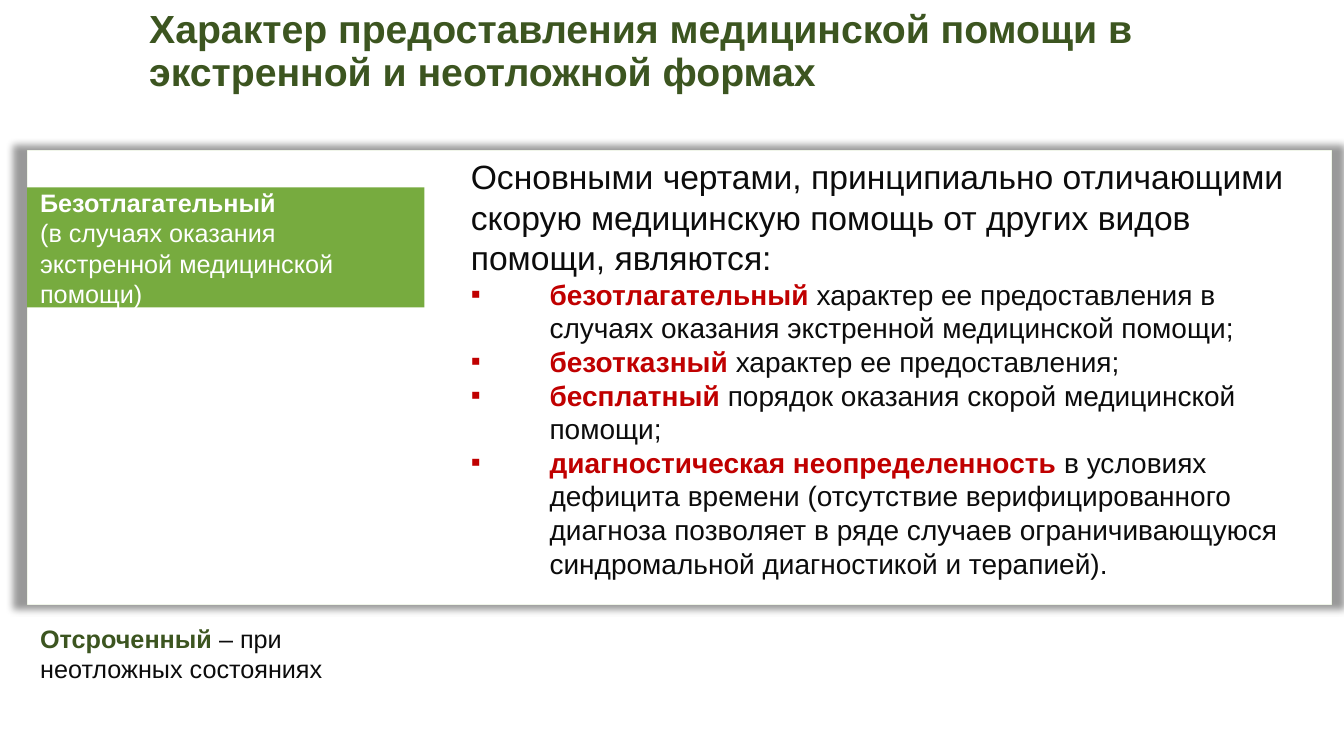
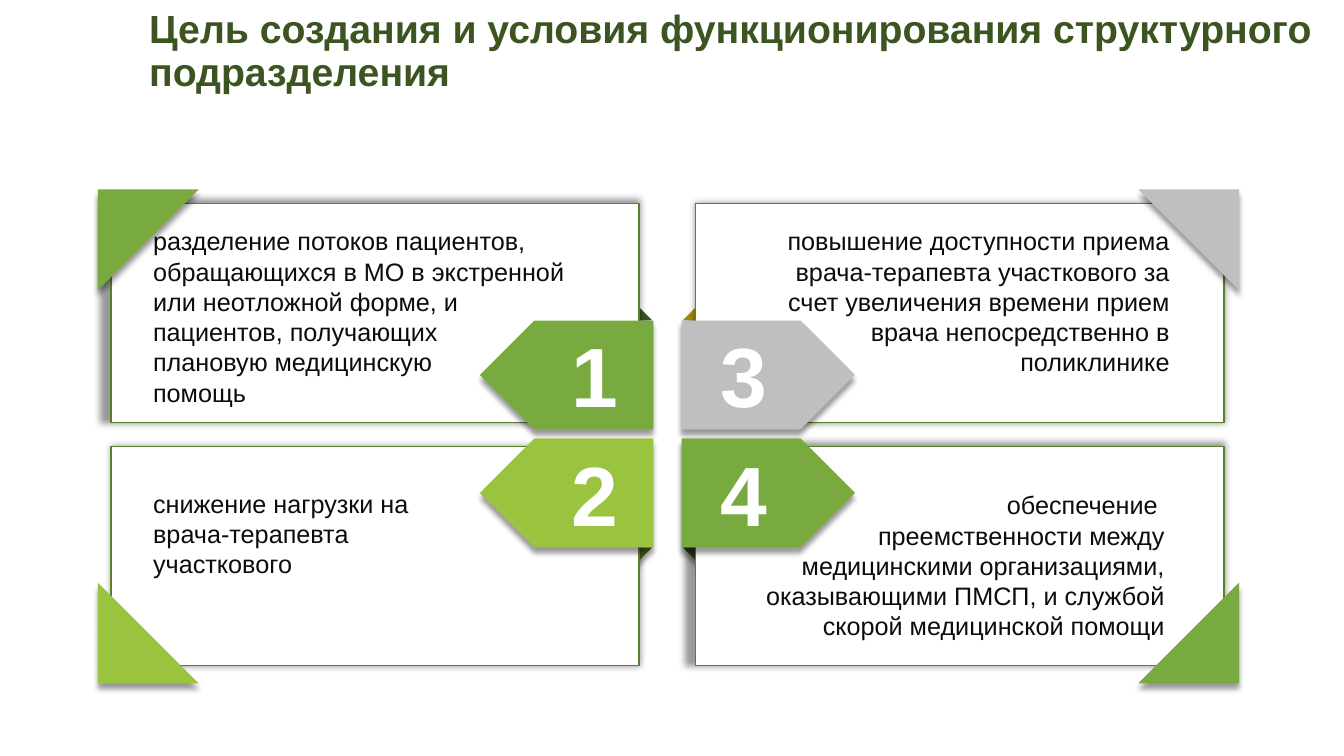
from lxml import etree
from pptx import Presentation
from pptx.dml.color import RGBColor
from pptx.enum.shapes import MSO_SHAPE
from pptx.enum.text import MSO_ANCHOR, MSO_AUTO_SIZE, PP_ALIGN
from pptx.oxml.ns import qn
from pptx.util import Inches, Pt

RECTANGLE = MSO_SHAPE.RECTANGLE
PENTAGON = MSO_SHAPE.PENTAGON
RIGHT_TRIANGLE = MSO_SHAPE.RIGHT_TRIANGLE
TOP = MSO_ANCHOR.TOP
FIXED = MSO_AUTO_SIZE.NONE
LEFT, CENTER, RIGHT = PP_ALIGN.LEFT, PP_ALIGN.CENTER, PP_ALIGN.RIGHT

FONT = "Arial"
COLORS = {
    "white": "FFFFFF",
    "black": "000000",
    "text": "0C0C0C",
    "accent": "C00000",
    "dark": "3C5520",
    "outline": "5A7F2F",
    "green": "78AA3F",
    "band": "77AB3F",
    "lime": "9AC340",
    "gray": "BFBFBF",
    "olive": "4D631F",
    "gold": "9E8803",
}

BODY = {"size": Pt(18), "color": "text"}
NUMBER = {"size": Pt(60), "color": "white", "bold": True}
TITLE = {"size": Pt(28), "color": "dark", "bold": True}
INTRO = {"size": Pt(24), "color": "text"}
ITEM = {"size": Pt(20), "color": "text"}
KEY_ITEM = {"size": Pt(20), "color": "accent", "bold": True}
SOFT_SHADOW = {"blurRad": Pt(4), "dist": Pt(4), "dir": 5400000}
CARD_SHADOW = {"blurRad": Pt(5), "dist": 0, "dir": 0}
WIDE_SHADOW = {**CARD_SHADOW, "sx": 102000, "sy": 102000}


def rgb(name):
    return RGBColor.from_string(COLORS[name])


def place(shape, bounds):
    for name, value in zip(("left", "top", "width", "height"), bounds):
        setattr(shape, name, Inches(value))


def add_color_alpha(color, percent):
    etree.SubElement(color, qn("a:alpha"), val=str(percent * 1000))


def add_shadow(shape, settings):
    shape.shadow.inherit = False
    effects = shape.element.spPr.find(qn("a:effectLst"))
    values = {name: str(value) for name, value in settings.items()}
    outer = etree.SubElement(effects, qn("a:outerShdw"), rotWithShape="0", **values)
    color = etree.SubElement(outer, qn("a:srgbClr"), val=COLORS["black"])
    add_color_alpha(color, 40)


def paint(shape, fill, shadow=None, line=None, line_width=1):
    shape.shadow.inherit = False
    shape.fill.solid()
    shape.fill.fore_color.rgb = rgb(fill)
    if line:
        shape.line.color.rgb = rgb(line)
        shape.line.width = Pt(line_width)
    else:
        shape.line.fill.background()
    if shadow:
        add_shadow(shape, shadow)
    return shape


def add_block(slide, kind, bounds, fill, rotation=0, **look):
    block = slide.shapes.add_shape(kind, *map(Inches, bounds))
    block.rotation = rotation
    return paint(block, fill, **look)


def add_fold(slide, points, fill):
    builder = slide.shapes.build_freeform(*map(Inches, points[0]), scale=1.0)
    builder.add_line_segments([tuple(map(Inches, point)) for point in points[1:]], close=True)
    return paint(builder.convert_to_shape(), fill, SOFT_SHADOW)


def write(frame, paragraphs, align=LEFT, spacing=1.0):
    settings = {"word_wrap": True, "auto_size": FIXED, "vertical_anchor": TOP}
    for name, value in settings.items():
        setattr(frame, name, value)
    for index, spans in enumerate(paragraphs):
        para = frame.paragraphs[0] if index == 0 else frame.add_paragraph()
        layout = {"alignment": align, "line_spacing": spacing, "space_before": Pt(0)}
        for name, value in layout.items():
            setattr(para, name, value)
        for text, style in spans:
            span = para.add_run()
            span.text = text
            span.font.name = FONT
            span.font.size = style["size"]
            span.font.bold = style.get("bold", False)
            span.font.color.rgb = rgb(style["color"])


def add_text(slide, bounds, paragraphs, align=LEFT):
    box = slide.shapes.add_textbox(*map(Inches, bounds))
    write(box.text_frame, paragraphs, align)


def set_bullet(para, symbol=None, indent=0):
    properties = para._p.get_or_add_pPr()
    properties.set("marL", str(Inches(indent)))
    properties.set("indent", str(-Inches(indent)))
    if symbol:
        etree.SubElement(properties, qn("a:buFont"), typeface=FONT)
        etree.SubElement(properties, qn("a:buChar"), char=symbol)
    else:
        etree.SubElement(properties, qn("a:buNone"))


def start_slide(deck, layout_index, title):
    slide = deck.slides.add_slide(deck.slide_layouts[layout_index])
    place(slide.shapes.title, (1.38, 0.05, 11.96, 1.09))
    write(slide.shapes.title.text_frame, [[(title, TITLE)]], spacing=0.9)
    return slide


def add_list(slide, bounds, intro, items):
    body = slide.placeholders[1]
    body.element.getparent().append(body.element)
    place(body, bounds)
    rows = [[(key, KEY_ITEM), (rest, ITEM)] for key, rest in items]
    write(body.text_frame, [[(intro, INTRO)]] + rows)
    first, *others = body.text_frame.paragraphs
    set_bullet(first)
    for para in others:
        set_bullet(para, "▪", 0.78)


def build_care_slide(deck):
    slide = start_slide(deck, 1, "Характер предоставления медицинской помощи в экстренной и неотложной формах")
    panel = add_block(slide, RECTANGLE, (0.27, 1.49, 12.94, 4.51), "white",
                      shadow={**WIDE_SHADOW, "algn": "ctr"}, line="green", line_width=0.25)
    add_color_alpha(panel.line._ln.find(".//" + qn("a:srgbClr")), 31)
    add_block(slide, RECTANGLE, (0.27, 1.86, 3.94, 1.19), "band")
    white = {**BODY, "color": "white"}
    add_text(slide, (0.3, 1.81, 3.7, 1.32), [
        [("Безотлагательный", {**white, "bold": True})],
        [("(в случаях оказания экстренной медицинской помощи)", white)],
    ])
    add_list(
        slide, (4.57, 1.5, 8.49, 4.34),
        "Основными чертами, принципиально отличающими скорую медицинскую помощь от других видов помощи, являются:",
        [
            ("безотлагательный", " характер ее предоставления в случаях оказания экстренной медицинской помощи;"),
            ("безотказный", " характер ее предоставления;"),
            ("бесплатный", " порядок оказания скорой медицинской помощи;"),
            ("диагностическая неопределенность ",
             "в условиях дефицита времени (отсутствие верифицированного диагноза позволяет "
             "в ряде случаев ограничивающуюся синдромальной диагностикой и терапией)."),
        ],
    )
    add_text(slide, (0.3, 6.13, 3.84, 0.71), [[
        ("Отсроченный", {**BODY, "color": "dark", "bold": True}),
        (" – при неотложных состояниях", BODY),
    ]])


def build_goals_slide(deck):
    slide = start_slide(deck, 5, "Цель создания и условия функционирования структурного подразделения")
    goals = [
        ("1", 0, 0, "green", "dark", (1.42, 2.19, 4.39, 1.92), [
            "разделение потоков пациентов, обращающихся в МО в экстренной или неотложной форме, "
            "и пациентов, получающих",
            "плановую медицинскую",
            "помощь",
        ]),
        ("2", 0, 1, "lime", "olive", (1.42, 4.79, 2.91, 1.01),
         ["снижение нагрузки на врача-терапевта участкового"]),
        ("3", 1, 0, "gray", "gold", (7.67, 2.19, 4.03, 1.62), [
            "повышение доступности приема врача-терапевта участкового за счет увеличения "
            "времени прием врача непосредственно в поликлинике",
        ]),
        ("4", 1, 1, "green", "dark", (7.36, 4.81, 4.29, 1.62), [
            "обеспечение ",
            "преемственности между медицинскими организациями, оказывающими ПМСП, "
            "и службой скорой медицинской помощи",
        ]),
    ]
    corner_rotations = {(0, 0): 90, (1, 0): 180, (1, 1): 270, (0, 1): 0}
    for number, column, row, color, fold_color, bounds, lines in goals:
        inner_x, outer_x = ((6.3, 6.47), (6.94, 6.77))[column]
        base_y, peak_y = ((3.18, 3.01), (5.43, 5.6))[row]
        add_fold(slide, [(inner_x, base_y), (outer_x, base_y), (inner_x, peak_y)], fold_color)
        shadow = {**WIDE_SHADOW, "algn": "br"} if column == row else CARD_SHADOW
        add_block(slide, RECTANGLE, (1.1 + 5.8 * column, 2.02 + 2.41 * row, 5.24, 2.17),
                  "white", shadow=shadow, line="outline")
        add_block(slide, PENTAGON, (4.76 + 2 * column, 3.18 + 1.17 * row, 1.72, 1.08),
                  color, 180 * (1 - column), shadow=SOFT_SHADOW)
        add_text(slide, (5.45 + 1.48 * column, 3.16 + 1.18 * row, 0.89, 1.11),
                 [[(number, NUMBER)]], CENTER)
        add_block(slide, RIGHT_TRIANGLE, (0.97 + 10.32 * column, 1.88 + 3.9 * row, 1, 1),
                  color, corner_rotations[column, row], shadow=SOFT_SHADOW)
        add_text(slide, bounds, [[(line, BODY)] for line in lines], (LEFT, RIGHT)[column])


def main():
    deck = Presentation()
    deck.slide_width, deck.slide_height = Inches(13.33), Inches(7.5)
    build_care_slide(deck)
    build_goals_slide(deck)
    deck.save("out.pptx")


if __name__ == "__main__":
    main()
